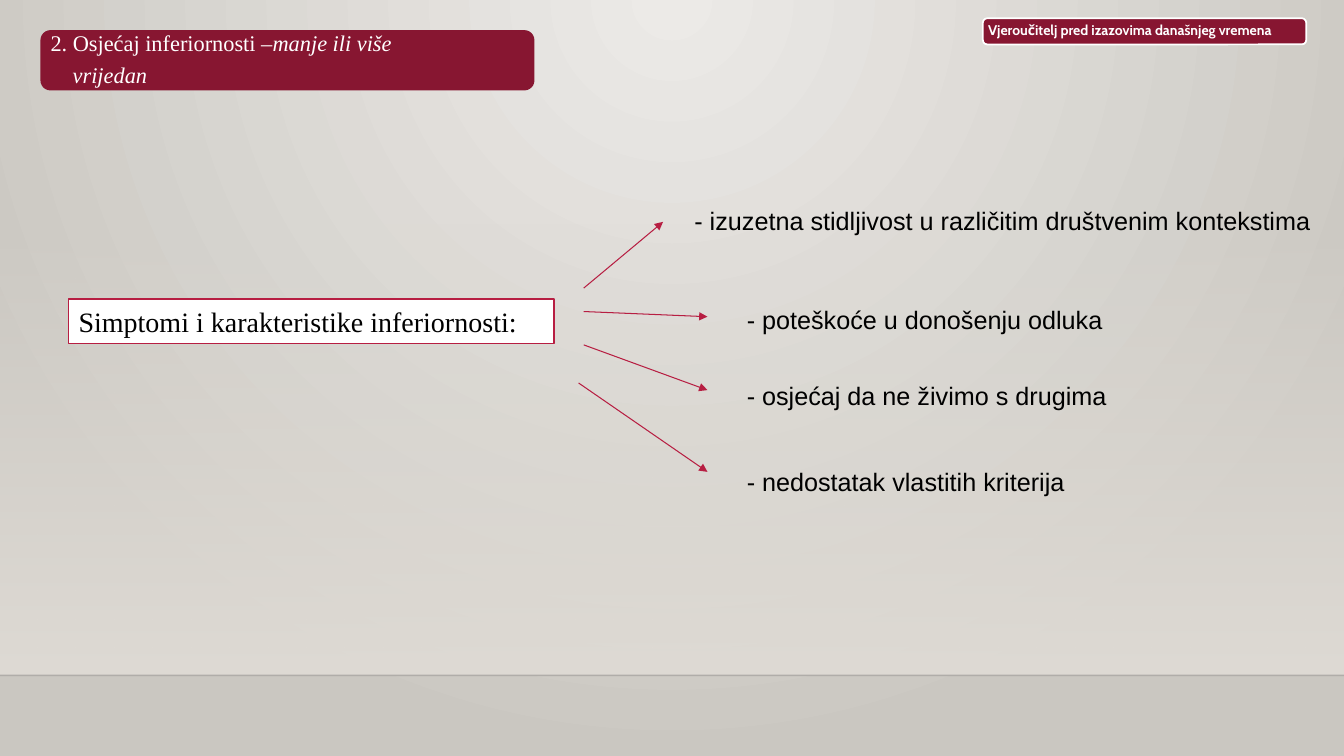
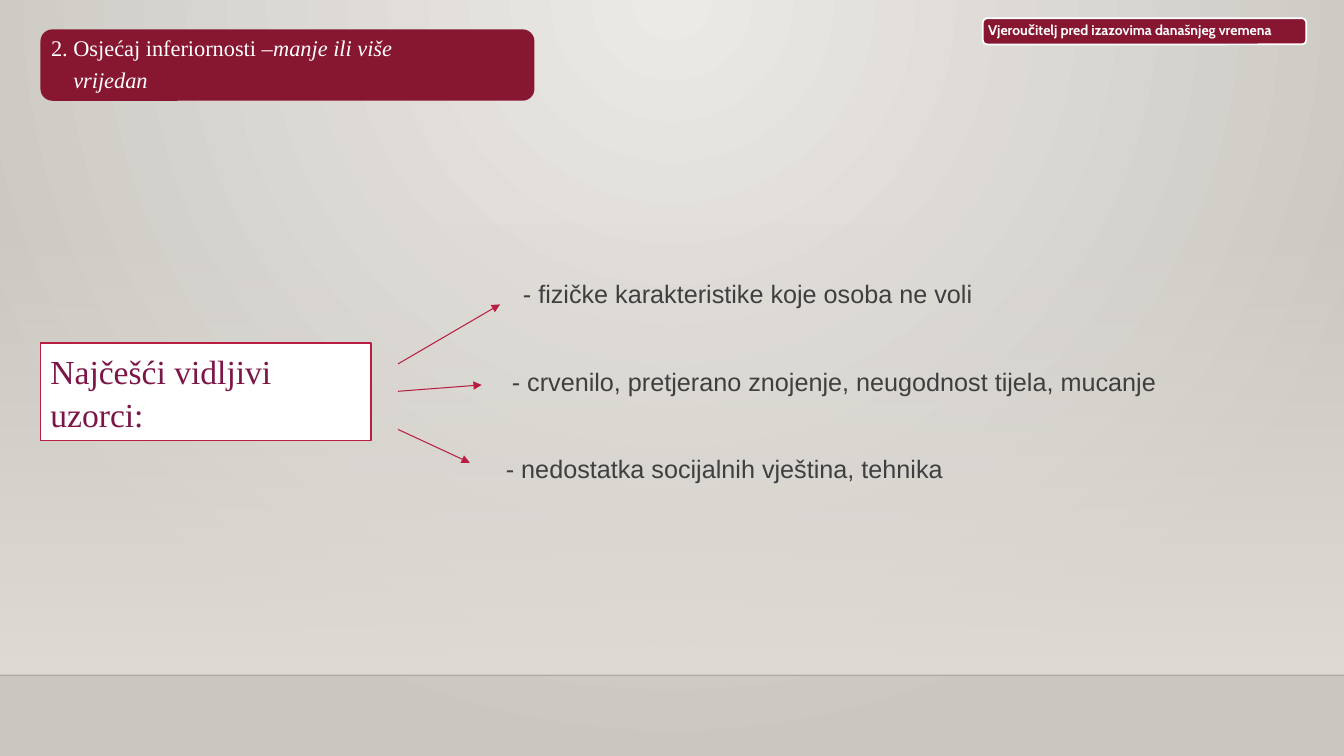
from dataclasses import dataclass

from lxml import etree
from pptx import Presentation
from pptx import util as u
from pptx.dml.color import RGBColor
from pptx.enum import shapes, text
from pptx.oxml.ns import qn


@dataclass(frozen=True)
class Theme:
    maroon: str = "871631"
    crimson: str = "B71E42"
    plum: str = "7C1646"
    white: str = "FFFFFF"
    black: str = "000000"
    grey: str = "3F3F3F"
    glow: str = "ECEAE7"
    edge: str = "CAC7C1"
    sand: str = "DFDBD5"
    floor: str = "000001"
    serif: str = "Times New Roman"
    sans: str = "Arial"
    badge_font: str = "Cabin"
    badge_size: float = 10
    title_size: float = 16
    item_size: float = 18


THEME = Theme()
WIDTH, HEIGHT = 33.87, 19.05
FLOOR_TOP = 17.02
BADGE = "Vjeroučitelj pred izazovima današnjeg vremena"
# Each paragraph is a list of (text, italic) runs
TITLE = [
    [("2. Osjećaj inferiornosti –", False), ("manje ili više", True)],
    [("vrijedan", True)],
]


def cm(*lengths):
    return [u.Cm(length) for length in lengths]


def add_alpha(color, percent):
    etree.SubElement(color, qn("a:alpha"), val=str(percent * 1000))


def fill_gradient(gradient, stops):
    """Fill an a:gradFill with (position, colour, opacity) stops."""
    gradient.clear()
    stop_list = etree.SubElement(gradient, qn("a:gsLst"))
    for position, color, opacity in stops:
        stop = etree.SubElement(stop_list, qn("a:gs"), pos=str(position * 1000))
        add_alpha(etree.SubElement(stop, qn("a:srgbClr"), val=color), opacity)


def write(frame, paragraphs, *, font, size, color, bold=False, line=None,
          after=0, inset=(0.25, 0.13), anchor=text.MSO_ANCHOR.TOP, hang=0):
    """Write paragraphs; those after the first are indented by hang."""
    frame.word_wrap = True
    frame.vertical_anchor = anchor
    frame.margin_left = frame.margin_right = u.Cm(inset[0])
    frame.margin_top = frame.margin_bottom = u.Cm(inset[1])
    if isinstance(paragraphs, str):
        paragraphs = [[(paragraphs, False)]]
    for index, runs in enumerate(paragraphs):
        paragraph = frame.add_paragraph() if index else frame.paragraphs[0]
        paragraph.alignment = text.PP_ALIGN.LEFT
        paragraph.space_after = u.Pt(after)
        if line:
            paragraph.line_spacing = line
        if index and hang:
            paragraph._p.get_or_add_pPr().set("marL", str(u.Cm(hang)))
        for words, italic in runs:
            run = paragraph.add_run()
            run.text = words
            run.font.name, run.font.size = font, u.Pt(size)
            run.font.bold, run.font.italic = bold, italic
            run.font.color.rgb = RGBColor.from_string(color)


class Deck:
    def __init__(self, theme):
        self.theme = theme
        self.prs = Presentation()
        self.prs.slide_width, self.prs.slide_height = cm(WIDTH, HEIGHT)
        self.slide = None
        self.paint_background()

    def paint_background(self):
        master = self.prs.slide_master
        master.background.fill.gradient()
        gradient = master.element.find(f".//{qn('p:bgPr')}/{qn('a:gradFill')}")
        fill_gradient(gradient, [(0, self.theme.glow, 100),
                                 (100, self.theme.edge, 100)])
        circle = etree.SubElement(gradient, qn("a:path"), path="circle")
        etree.SubElement(circle, qn("a:fillToRect"),
                         l="43000", t="0", r="43000", b="100000")

    def new_slide(self, title_top, title_height):
        self.slide = self.prs.slides.add_slide(self.prs.slide_layouts[6])
        self.wall()
        self.title(title_top, title_height)
        self.badge()

    def panel(self, kind, box, fill, line=None):
        panel = self.slide.shapes.add_shape(kind, *cm(*box))
        panel.shadow.inherit = False
        if fill:
            panel.fill.solid()
            panel.fill.fore_color.rgb = RGBColor.from_string(fill)
        if line:
            panel.line.color.rgb = RGBColor.from_string(line)
            panel.line.width = u.Pt(1.25)
        else:
            panel.line.fill.background()
        return panel

    def line(self, ends, color, width):
        line = self.slide.shapes.add_connector(
            shapes.MSO_CONNECTOR.STRAIGHT, *cm(*ends))
        line.line.color.rgb = RGBColor.from_string(color)
        line.line.width = u.Pt(width)
        etree.SubElement(line._element.spPr, qn("a:effectLst"))
        return line

    def wall(self):
        top = 5.61
        wall = self.panel(shapes.MSO_SHAPE.RECTANGLE,
                          (0, top, WIDTH, FLOOR_TOP - top), None)
        wall.fill.gradient()
        gradient = wall._element.spPr.find(qn("a:gradFill"))
        fill_gradient(gradient, [(0, self.theme.sand, 0),
                                 (100, self.theme.sand, 100)])
        etree.SubElement(gradient, qn("a:lin"), ang="5400000", scaled="0")
        floor = self.line((0, FLOOR_TOP, WIDTH, FLOOR_TOP), self.theme.floor, 1)
        add_alpha(floor.line._ln.find(f".//{qn('a:srgbClr')}"), 20)

    def title(self, top, height):
        title = self.panel(shapes.MSO_SHAPE.ROUNDED_RECTANGLE,
                           (1.02, top, 12.45, height), self.theme.maroon)
        write(title.text_frame, TITLE, font=self.theme.serif,
              size=self.theme.title_size, color=self.theme.white, line=0.9,
              after=5.6, inset=(0.18, 0.18), hang=0.56,
              anchor=text.MSO_ANCHOR.MIDDLE)

    def badge(self):
        badge = self.panel(shapes.MSO_SHAPE.ROUNDED_RECTANGLE,
                           (24.77, 0.46, 8.15, 0.66),
                           self.theme.maroon, self.theme.white)
        write(badge.text_frame, BADGE, font=self.theme.badge_font,
              size=self.theme.badge_size, color=self.theme.white, bold=True,
              line=0.9, after=3.5, inset=(0.1, 0.1),
              anchor=text.MSO_ANCHOR.MIDDLE)

    def topic(self, words, box, **look):
        topic = self.panel(shapes.MSO_SHAPE.RECTANGLE, box,
                           self.theme.white, self.theme.crimson)
        write(topic.text_frame, words, font=self.theme.serif, **look)

    def arrow(self, ends):
        arrow = self.line(ends, self.theme.crimson, 0.75)
        etree.SubElement(arrow.line._ln, qn("a:tailEnd"), type="triangle")

    def items(self, rows, color):
        """Place (text, left, top, width, arrow ends); the first is set tight."""
        for index, (words, left, top, width, ends) in enumerate(rows):
            height, line, after = (1.09, 1.07, 8) if index else (1.02, None, 0)
            item = self.slide.shapes.add_textbox(*cm(left, top, width, height))
            write(item.text_frame, words, font=self.theme.sans,
                  size=self.theme.item_size, color=color, line=line, after=after)
            self.arrow(ends)


def main():
    deck = Deck(THEME)

    # Symptoms of inferiority
    deck.new_slide(0.76, 1.52)
    deck.topic("Simptomi i karakteristike inferiornosti:",
               (1.73, 7.54, 12.24, 1.12), size=20, color=THEME.black)
    deck.items([
        ("- izuzetna stidljivost u različitim društvenim kontekstima",
         17.25, 5.05, 16.18, (14.71, 7.26, 16.71, 5.59)),
        ("- poteškoće u donošenju odluka",
         18.57, 7.49, 11.73, (14.71, 7.85, 17.83, 7.98)),
        ("- osjećaj da ne živimo s drugima",
         18.57, 9.4, 9.86, (14.71, 8.69, 17.83, 9.83)),
        ("- nedostatak vlastitih kriterija",
         18.57, 11.56, 8.8, (14.58, 9.65, 17.83, 11.89)),
    ], THEME.black)

    # Visible causes
    deck.new_slide(0.74, 1.8)
    deck.topic("Najčešći vidljivi uzorci:", (1.02, 8.64, 8.33, 2.46),
               size=24, color=THEME.plum, line=1.07, after=8)
    deck.items([
        ("- fizičke karakteristike koje osoba ne voli",
         12.93, 6.88, 11.95, (10.03, 9.17, 12.6, 7.67)),
        ("- crvenilo, pretjerano znojenje, neugodnost tijela, mucanje",
         12.65, 9.04, 16.95, (10.03, 9.86, 12.14, 9.7)),
        ("- nedostatka socijalnih vještina, tehnika",
         12.5, 11.23, 11.82, (10.03, 10.82, 11.84, 11.66)),
    ], THEME.grey)

    deck.prs.save("out.pptx")


if __name__ == "__main__":
    main()
